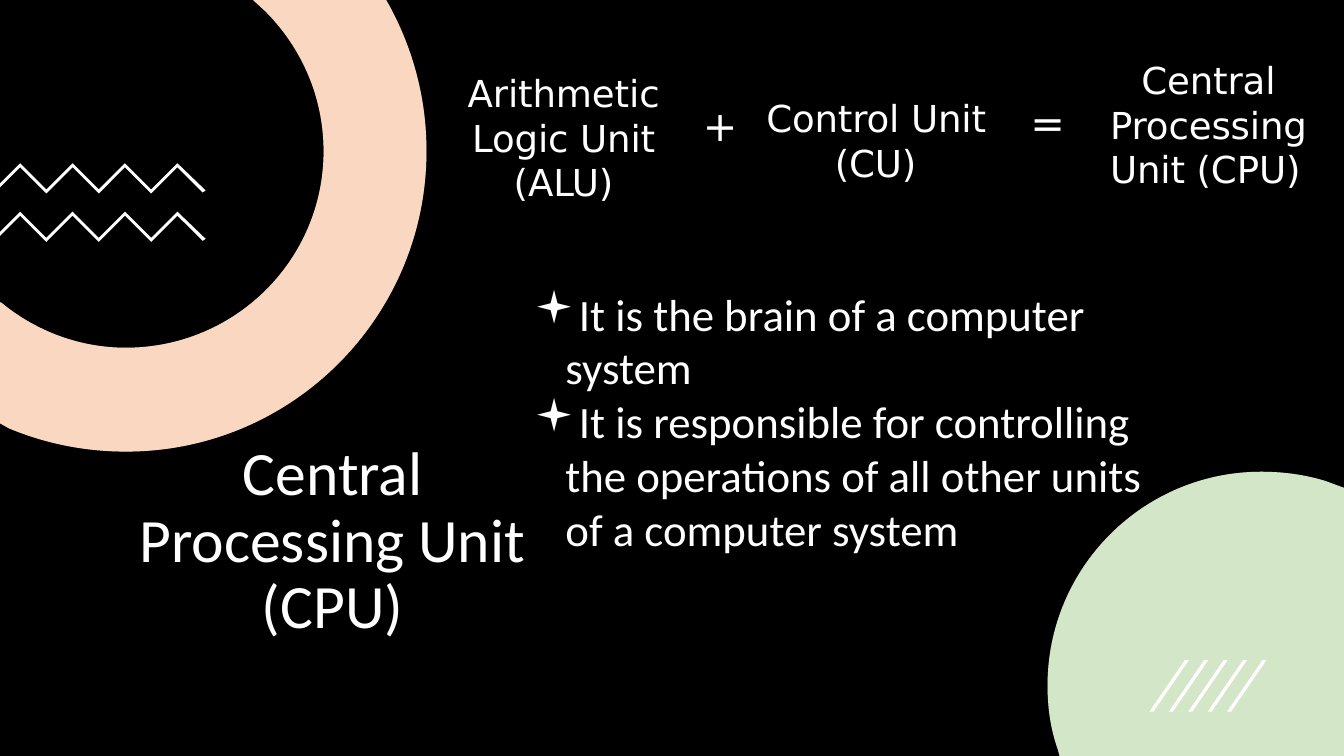
from dataclasses import dataclass

from lxml import etree
from pptx import Presentation
from pptx.dml.color import RGBColor
from pptx.enum.shapes import MSO_SHAPE
from pptx.enum.text import MSO_ANCHOR, PP_ALIGN
from pptx.oxml.ns import qn
from pptx.util import Inches, Pt

RECTANGLE = MSO_SHAPE.RECTANGLE
TOP, MIDDLE = MSO_ANCHOR.TOP, MSO_ANCHOR.MIDDLE
LEFT, CENTER = PP_ALIGN.LEFT, PP_ALIGN.CENTER

BLACK = RGBColor(0x00, 0x00, 0x00)
WHITE = RGBColor(0xFF, 0xFF, 0xFF)
ORANGE = RGBColor(0xED, 0x7D, 0x31)
GREEN = RGBColor(0x70, 0xAD, 0x47)

WIDTH, HEIGHT = 13.33, 7.5
EQUATION_FONT, BODY_FONT, BULLET_FONT = "DejaVu Sans", "Calibri", "Wingdings"
TINT_OPACITY = 30

# A segment is one point (line) or three points (curve: two handles and the end)
Point = tuple[float, float]
Segment = tuple[Point, ...]


@dataclass(frozen=True)
class Label:
    left: float
    top: float
    width: float
    height: float
    lines: tuple[str, ...]
    size: float
    font: str = EQUATION_FONT
    align: PP_ALIGN = LEFT
    anchor: MSO_ANCHOR = TOP
    inset: float = 0
    inset_top: float = 0
    margin: float = 0
    indent: float = 0
    line_spacing: float = 1.0
    tracking: float = 0
    bullet: str = ""
    boxed: bool = False


@dataclass(frozen=True)
class Disc:
    segments: tuple[Segment, ...]
    tint: RGBColor


RING = Disc((
    ((2.51, 0),), ((3.83, 0),), ((3.87, 0.07),),
    ((4.1, 0.5), (4.23, 0.98), (4.23, 1.5)),
    ((4.23, 3.14), (2.9, 4.48), (1.25, 4.48)),
    ((0.84, 4.48), (0.45, 4.4), (0.09, 4.25)),
    ((0, 4.2),), ((0, 3),), ((0.01, 3),),
    ((0.35, 3.28), (0.78, 3.45), (1.25, 3.45)),
    ((2.33, 3.45), (3.21, 2.58), (3.21, 1.5)),
    ((3.21, 0.96), (2.99, 0.47), (2.63, 0.11)),
), ORANGE)
CORNER = Disc((
    ((12.51, 4.68),),
    ((12.73, 4.68), (12.94, 4.71), (13.14, 4.77)),
    ((13.33, 4.84),), ((13.33, 7.5),), ((10.51, 7.5),), ((10.49, 7.43),),
    ((10.42, 7.23), (10.39, 7.02), (10.39, 6.8)),
    ((10.39, 5.63), (11.34, 4.68), (12.51, 4.68)),
), GREEN)

TITLE = Label(1.21, 3.62, 4.18, 3.52, ("Central Processing Unit (CPU)",), 44,
              BODY_FONT, CENTER, MIDDLE, 0.1, 0.05, line_spacing=0.9)
EQUATION = (
    Label(4.38, 0.63, 2.39, 1.46, ("Arithmetic Logic Unit (ALU)",), 26.5,
          align=CENTER, inset_top=0.07, margin=0.03, tracking=-0.1, boxed=True),
    Label(7.52, 0.51, 2.39, 1.36, ("Control Unit (CU)",), 26.5,
          inset_top=0.44, margin=0.76, indent=-0.68, tracking=-0.1, boxed=True),
    Label(10.2, 0.95, 0.38, 0.52, ("=",), 29.5, inset_top=0.01, margin=0.02),
    Label(10.79, 0.54, 2.39, 1.4, ("Central Processing Unit (CPU)",), 26.5,
          inset_top=0.03, margin=0.22, indent=0.31, tracking=-0.1, boxed=True),
    Label(6.95, 0.98, 0.38, 0.52, ("+",), 29.5, inset_top=0.01, margin=0.02),
)
FACTS = Label(5.2, 2.79, 6.67, 2.79,
              ("It is the brain of a computer system",
               "It is responsible for controlling the operations of all other "
               "units of a computer system"),
              32, BODY_FONT, inset=0.1, inset_top=0.05,
              margin=0.31, indent=-0.31, bullet="▪")


def add_outline(shapes, segments: list[Segment], color: RGBColor,
                opacity: int = 100) -> None:
    points = [(Inches(x), Inches(y)) for segment in segments for x, y in segment]
    builder = shapes.build_freeform(*points[0])
    builder.add_line_segments(points[1:], close=True)
    outline = builder.convert_to_shape()
    outline.shadow.inherit = False
    outline.fill.solid()
    outline.fill.fore_color.rgb = color
    outline.line.fill.background()
    # Turn each run of three curve points into one Bézier step
    steps = iter(list(outline._element.iter(qn("a:lnTo"))))
    for segment in segments[1:]:
        step = next(steps)
        if len(segment) == 3:
            step.tag = qn("a:cubicBezTo")
            for _ in range(2):
                handle = next(steps)
                step.append(handle[0])
                handle.getparent().remove(handle)
    if opacity < 100:
        solid = next(outline._element.iter(qn("a:solidFill")))
        etree.SubElement(solid[0], qn("a:alpha"), val=str(opacity * 1000))


def add_polygon(shapes, points: list[Point]) -> None:
    add_outline(shapes, [(point,) for point in points], WHITE)


def add_disc(shapes, disc: Disc) -> None:
    for color, opacity in ((WHITE, 100), (disc.tint, TINT_OPACITY)):
        add_outline(shapes, list(disc.segments), color, opacity)


def add_zigzag(shapes, top: float) -> None:
    upper = [(0.2 + 0.26 * turn, top + 0.26 * (turn % 2)) for turn in range(7)]
    lower = [(x, y + 0.04) for x, y in reversed(upper)]
    right_end = [(2.04, top + 0.27), (2.01, top + 0.29)]
    left_end = [(0, top + 0.24), (0, top + 0.2)]
    add_polygon(shapes, upper + right_end + lower + left_end)


def add_rectangle(shapes, left: float, top: float, width: float, height: float):
    box = shapes.add_shape(RECTANGLE, Inches(left), Inches(top),
                           Inches(width), Inches(height))
    box.shadow.inherit = False
    box.fill.solid()
    box.fill.fore_color.rgb = BLACK
    box.line.fill.background()
    return box


def add_label(shapes, label: Label) -> None:
    place = (label.left, label.top, label.width, label.height)
    if label.boxed:
        box = add_rectangle(shapes, *place)
        box.line.color.rgb = BLACK
        box.line.width = Pt(0.72)
    else:
        box = shapes.add_textbox(*map(Inches, place))
    frame = box.text_frame
    frame.word_wrap = True
    frame.vertical_anchor = label.anchor
    frame.margin_left = frame.margin_right = Inches(label.inset)
    frame.margin_top = Inches(label.inset_top)
    frame.margin_bottom = Inches(label.inset / 2)
    frame.text = "\n".join(label.lines)
    for para in frame.paragraphs:
        para.alignment = label.align
        para.line_spacing = label.line_spacing
        properties = para._p.get_or_add_pPr()
        properties.set("marL", str(Inches(label.margin)))
        properties.set("indent", str(Inches(label.indent)))
        if label.bullet:
            etree.SubElement(properties, qn("a:buFont"), typeface=BULLET_FONT)
            etree.SubElement(properties, qn("a:buChar"), char=label.bullet)
        for span in para.runs:
            span.font.name = label.font
            span.font.size = Pt(label.size)
            span.font.color.rgb = WHITE
            if label.tracking:
                span.font._element.set("spc", str(round(label.tracking * 100)))


def main() -> None:
    deck = Presentation()
    deck.slide_width, deck.slide_height = Inches(WIDTH), Inches(HEIGHT)
    page = deck.slides.add_slide(deck.slide_layouts[6])
    shapes = page.shapes

    # Backdrop, ring and title
    add_rectangle(shapes, 0, 0, WIDTH, HEIGHT)
    add_disc(shapes, RING)
    add_label(shapes, TITLE)

    # Zigzags and corner disc
    for top in (1.62, 2.1):
        add_zigzag(shapes, top)
    add_disc(shapes, CORNER)

    # Slanted strokes
    strokes = shapes.add_group_shape()
    for index in range(5):
        left = 11.4 + 0.77 * index / 4
        add_polygon(strokes.shapes, [(left + 0.04, 7.06), (left, 7.06),
                                     (left + 0.35, 6.55), (left + 0.39, 6.55)])

    # Equation and facts
    for label in (*EQUATION, FACTS):
        add_label(shapes, label)

    deck.save("out.pptx")


if __name__ == "__main__":
    main()
